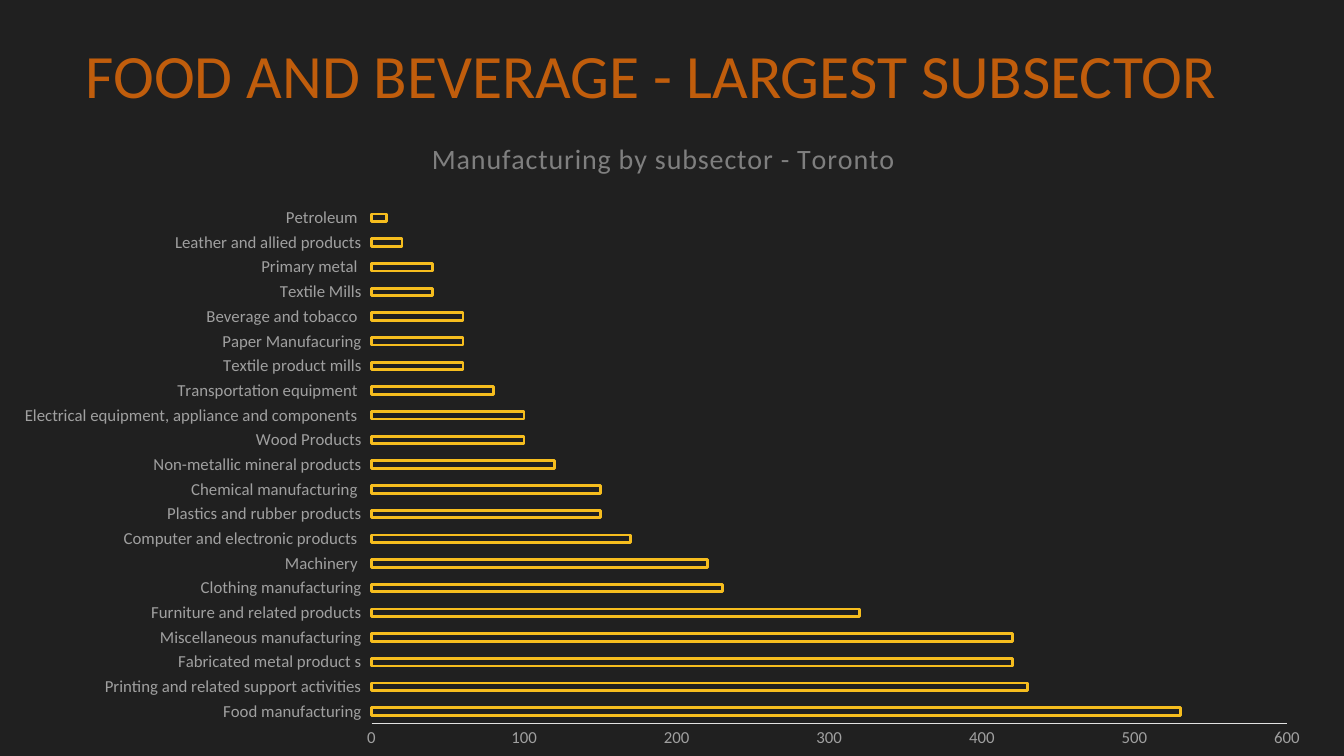
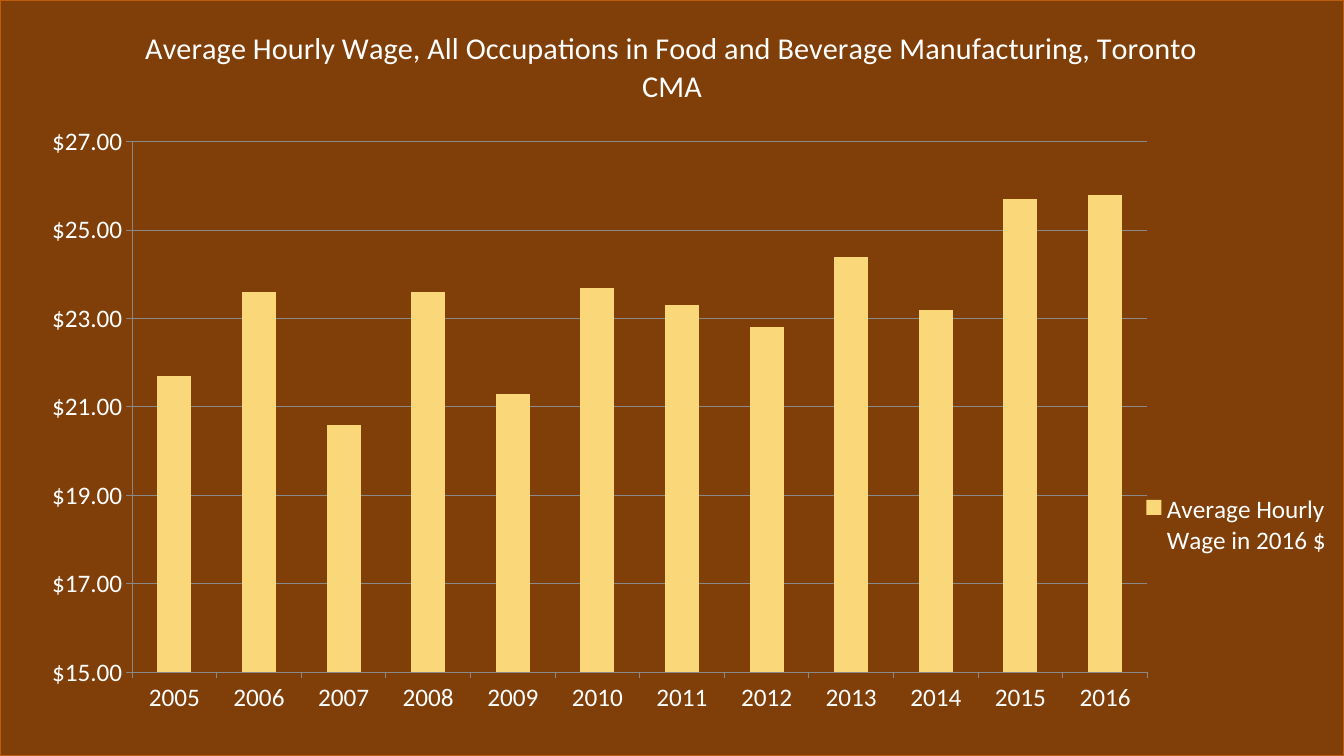
from lxml import etree
from pptx import Presentation
from pptx.chart.data import CategoryChartData
from pptx.dml.color import RGBColor
from pptx.enum.chart import XL_CHART_TYPE as ChartType, XL_LEGEND_POSITION as LegendPosition
from pptx.enum.chart import XL_TICK_MARK as TickMark
from pptx.enum.text import MSO_ANCHOR as Anchor
from pptx.oxml import parse_xml
from pptx.oxml.ns import nsdecls, qn
from pptx.util import Inches, Pt

FONT = "Calibri"
COLORS = {
    "background": "202020",
    "orange": "C05D0C",
    "brown": "803E08",
    "gold": "F6BD1E",
    "cream": "FAD778",
    "white": "FFFFFF",
    "label": "A0A0A0",
    "heading": "7F7F7F",
    "axis": "E2E2E2",
    "grid": "898989",
}

SUBSECTORS = [
    ("Food manufacturing", 530),
    ("Printing and related support activities", 430),
    ("Fabricated metal product s", 420),
    ("Miscellaneous manufacturing", 420),
    ("Furniture and related products", 320),
    ("Clothing manufacturing", 230),
    ("Machinery ", 220),
    ("Computer and electronic products ", 170),
    ("Plastics and rubber products", 150),
    ("Chemical manufacturing ", 150),
    ("Non-metallic mineral products", 120),
    ("Wood Products", 100),
    ("Electrical equipment, appliance and components ", 100),
    ("Transportation equipment ", 80),
    ("Textile product mills", 60),
    ("Paper Manufacuring", 60),
    ("Beverage and tobacco ", 60),
    ("Textile Mills", 40),
    ("Primary metal ", 40),
    ("Leather and allied products", 20),
    ("Petroleum ", 10),
]
WAGES = [21.7, 23.6, 20.6, 23.6, 21.3, 23.7, 23.3, 22.8, 24.4, 23.2, 25.7, 25.8]


def rgb(name):
    return RGBColor.from_string(COLORS[name])


def style_font(font, size, color):
    font.name = FONT
    font.size = Pt(size)
    font.bold = False
    font.color.rgb = rgb(color)


def style_line(line, color, width=0.75):
    line.color.rgb = rgb(color)
    line.width = Pt(width)


def add_slide(prs):
    slide = prs.slides.add_slide(prs.slide_layouts[6])
    slide.background.fill.solid()
    slide.background.fill.fore_color.rgb = rgb("background")
    return slide


def add_title(slide, text):
    box = slide.shapes.add_textbox(Inches(0.75), Inches(0.42), Inches(11.67), Inches(0.73))
    frame = box.text_frame
    frame.word_wrap = True
    frame.vertical_anchor = Anchor.BOTTOM
    frame.text = text
    paragraph = frame.paragraphs[0]
    paragraph.line_spacing = 0.85
    style_font(paragraph.runs[0].font, 44, "orange")


def add_chart(slide, kind, place, series_name, categories, values):
    data = CategoryChartData()
    data.categories = categories
    data.add_series(series_name, values)
    chart = slide.shapes.add_chart(kind, *map(Inches, place), data).chart
    chart.has_legend = False
    chart.plots[0].vary_by_categories = False
    chart.plots[0].series[0].invert_if_negative = False
    return chart


def set_heading(chart, text, size, color, spacing=0):
    frame = chart.chart_title.text_frame
    frame.text = text
    run = frame.paragraphs[0].runs[0]
    style_font(run.font, size, color)
    run.font._element.set("spc", str(spacing))
    chart.chart_title.include_in_layout = False


def make_layout(x, y, w, h, inner=False):
    target = '<c:layoutTarget val="inner"/>' if inner else ""
    sizes = "".join(f'<c:{key} val="{value}"/>' for key, value in zip("xywh", (x, y, w, h)))
    return parse_xml(
        f'<c:layout {nsdecls("c")}><c:manualLayout>{target}'
        f'<c:xMode val="edge"/><c:yMode val="edge"/>{sizes}</c:manualLayout></c:layout>'
    )


def drop_layout(parent):
    for old in parent.findall(qn("c:layout")):
        parent.remove(old)


def place_plot(chart, *area):
    plot_area = chart.element.find(qn("c:chart")).find(qn("c:plotArea"))
    drop_layout(plot_area)
    plot_area.insert(0, make_layout(*area, inner=True))


def place_legend(chart, *area):
    chart.has_legend = True
    chart.legend.position = LegendPosition.RIGHT
    chart.legend.include_in_layout = False
    legend = chart.element.find(qn("c:chart")).find(qn("c:legend"))
    drop_layout(legend)
    legend.find(qn("c:legendPos")).addnext(make_layout(*area))


def fill_chart(chart, fill, border):
    panel = parse_xml(f'<c:spPr {nsdecls("c", "a")}/>')
    outline = etree.Element(qn("a:ln"), w=str(Pt(0.75)))
    for parent, color in ((panel, fill), (outline, border)):
        solid = etree.SubElement(parent, qn("a:solidFill"))
        etree.SubElement(solid, qn("a:srgbClr"), val=COLORS[color])
    panel.append(outline)
    chart.element.find(qn("c:chart")).addnext(panel)


def build_subsectors(prs):
    slide = add_slide(prs)
    add_title(slide, "FOOD AND BEVERAGE - LARGEST SUBSECTOR")
    names, counts = zip(*SUBSECTORS)
    chart = add_chart(slide, ChartType.BAR_CLUSTERED, (0, 1.15, 13.16, 6.35),
                      "Series 1", names, counts)
    style_font(chart.font, 12, "label")
    set_heading(chart, "Manufacturing by subsector - Toronto", 20, "heading", 50)
    place_plot(chart, 0.28, 0.14, 0.69, 0.81)

    bars = chart.plots[0]
    bars.gap_width = 227
    bars.overlap = -48
    bars.series[0].format.fill.background()
    style_line(bars.series[0].format.line, "gold", 2)

    chart.category_axis.format.line.fill.background()
    counts_axis = chart.value_axis
    counts_axis.has_major_gridlines = False
    counts_axis.major_tick_mark = TickMark.NONE
    counts_axis.minimum_scale = 0
    counts_axis.maximum_scale = 600
    counts_axis.major_unit = 100
    style_line(counts_axis.format.line, "axis")


def build_wages(prs):
    slide = add_slide(prs)
    years = [str(2005 + step) for step in range(len(WAGES))]
    chart = add_chart(slide, ChartType.COLUMN_STACKED, (0, 0, 13.33, 7.5),
                      "Average Hourly Wage in 2016 $", years, WAGES)
    style_font(chart.font, 18, "white")
    fill_chart(chart, "brown", "orange")
    set_heading(chart, "Average Hourly Wage, All Occupations in Food and Beverage "
                "Manufacturing, Toronto CMA", 21.6, "white")
    place_plot(chart, 0.098, 0.187, 0.756, 0.703)
    place_legend(chart, 0.845, 0.65, 0.15, 0.09)

    columns = chart.plots[0]
    columns.gap_width = 150
    columns.overlap = 100
    columns.series[0].format.fill.solid()
    columns.series[0].format.fill.fore_color.rgb = rgb("cream")

    wage_axis = chart.value_axis
    wage_axis.minimum_scale = 15
    wage_axis.maximum_scale = 27
    wage_axis.major_unit = 2
    wage_axis.tick_labels.number_format = '"$"#,##0.00'
    wage_axis.tick_labels.number_format_is_linked = False
    wage_axis.has_major_gridlines = True
    for line in (wage_axis.major_gridlines.format.line, wage_axis.format.line,
                 chart.category_axis.format.line):
        style_line(line, "grid")


def main():
    prs = Presentation()
    prs.slide_width = Inches(13.33)
    prs.slide_height = Inches(7.5)
    build_subsectors(prs)
    build_wages(prs)
    prs.save("out.pptx")


if __name__ == "__main__":
    main()
